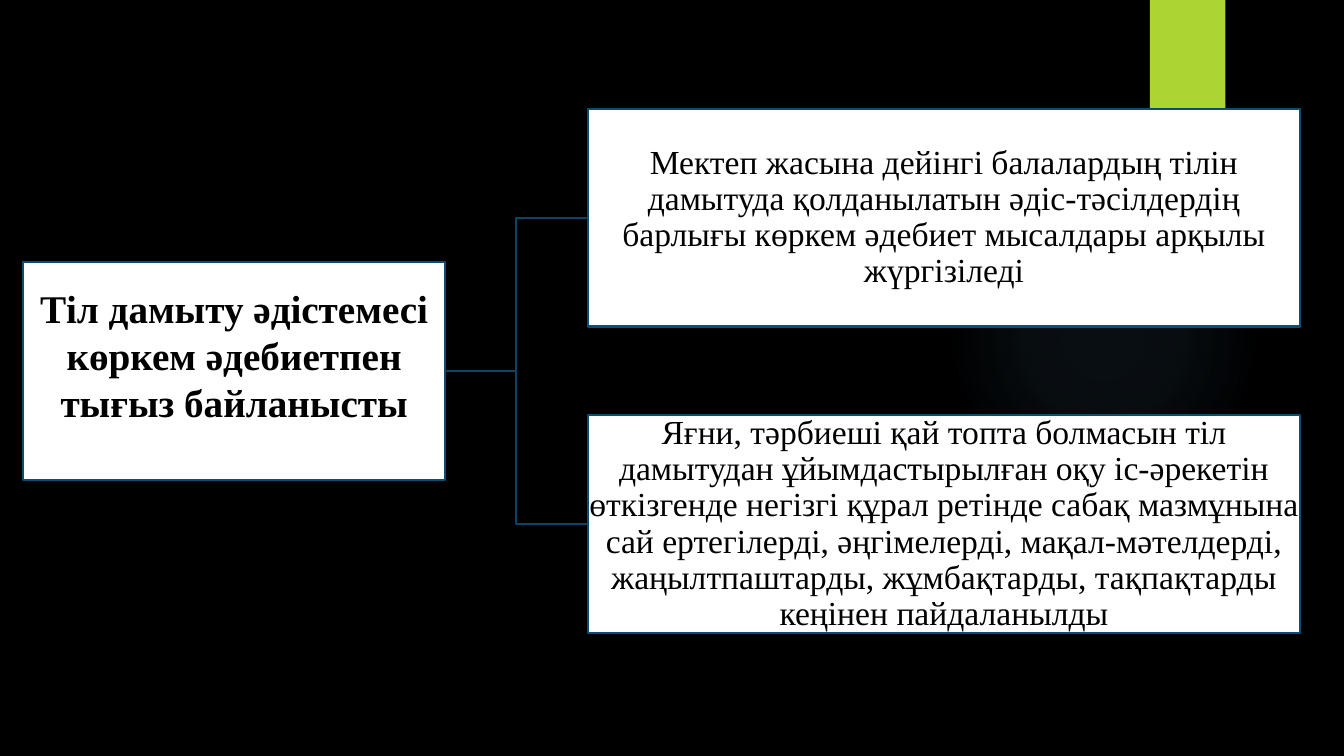
from lxml import etree
from pptx import Presentation
from pptx.dml.color import RGBColor
from pptx.enum.shapes import MSO_CONNECTOR as Connector, MSO_SHAPE as Shape
from pptx.enum.text import MSO_ANCHOR as Anchor, PP_ALIGN as Align
from pptx.oxml import parse_xml
from pptx.oxml.ns import nsdecls, qn
from pptx.util import Cm, Pt

BOX_HEIGHT = 5.49
ROOT_LEFT, ROOT_TOP, ROOT_WIDTH = 0.58, 6.6, 10.64
BRANCH_LEFT, BRANCH_WIDTH = 14.81, 17.96
BRANCH_TOP, BRANCH_STEP = 2.74, 7.72
GLOW_STOPS = [(0, 7), (36, 6), (69, 0)]

ROOT_TEXT = "Тіл дамыту әдістемесі көркем әдебиетпен тығыз байланысты"
BRANCH_TEXTS = [
    "Мектеп жасына дейінгі балалардың тілін дамытуда қолданылатын "
    "әдіс-тәсілдердің барлығы көркем әдебиет мысалдары арқылы жүргізіледі",
    "Яғни, тәрбиеші қай топта болмасын тіл дамытудан ұйымдастырылған оқу "
    "іс-әрекетін өткізгенде негізгі құрал ретінде сабақ мазмұнына сай "
    "ертегілерді, әңгімелерді, мақал-мәтелдерді, жаңылтпаштарды, "
    "жұмбақтарды, тақпақтарды кеңінен пайдаланылды",
]


def paint(target, colour):
    target.solid()
    target.fore_color.rgb = RGBColor.from_string(colour)


def add_plain(page, kind, left, top, width, height, colour):
    shape = page.shapes.add_shape(kind, Cm(left), Cm(top), Cm(width), Cm(height))
    shape.shadow.inherit = False
    shape.line.fill.background()
    paint(shape.fill, colour)
    return shape


def add_glow(page, left, top, size, colour):
    glow = add_plain(page, Shape.OVAL, left, top, size, size, colour)
    stops = "".join(
        f'<a:gs pos="{place * 1000}"><a:srgbClr val="{colour}">'
        f'<a:alpha val="{alpha * 1000}"/></a:srgbClr></a:gs>'
        for place, alpha in GLOW_STOPS
    )
    gradient = parse_xml(
        f'<a:gradFill {nsdecls("a")}><a:gsLst>{stops}</a:gsLst><a:path path="circle">'
        '<a:fillToRect l="50000" t="50000" r="50000" b="50000"/></a:path></a:gradFill>'
    )
    properties = glow.element.spPr
    properties.replace(properties.find(qn("a:solidFill")), gradient)


def add_link(page, start, end):
    link = page.shapes.add_connector(Connector.ELBOW, *map(Cm, start + end))
    paint(link.line.fill, "0B4467")
    link.line.width = Pt(1.5)
    etree.SubElement(link.element.spPr, qn("a:effectLst"))


def add_card(page, left, top, width, text, size, bold=False, spacing=1.0, bottom=0.04):
    card = add_plain(page, Shape.RECTANGLE, left, top, width, BOX_HEIGHT, "FFFFFF")
    paint(card.line.fill, "0D4D74")
    card.line.width = Pt(1.5)
    frame = card.text_frame
    frame.word_wrap = True
    frame.vertical_anchor = Anchor.MIDDLE
    frame.margin_left = frame.margin_right = frame.margin_top = Cm(0.04)
    frame.margin_bottom = Cm(bottom)
    para = frame.paragraphs[0]
    para.text = text
    para.alignment = Align.CENTER
    para.line_spacing = spacing
    para.font.name = "Times New Roman"
    para.font.size = Pt(size)
    para.font.bold = bold
    para.font.color.rgb = RGBColor.from_string("000000")


def main():
    deck = Presentation()
    deck.slide_width, deck.slide_height = Cm(33.87), Cm(19.05)
    page = deck.slides.add_slide(deck.slide_layouts[6])
    paint(page.background.fill, "000000")

    add_glow(page, 23.9, 4.65, 7.82, "7AC4F0")
    add_plain(page, Shape.RECTANGLE, 28.98, 0, 1.9, 3.18, "ACD433")

    root_exit = (ROOT_LEFT + ROOT_WIDTH, ROOT_TOP + BOX_HEIGHT / 2)
    add_card(page, ROOT_LEFT, ROOT_TOP, ROOT_WIDTH, ROOT_TEXT, 28, bold=True, bottom=0.85)
    for index, text in enumerate(BRANCH_TEXTS):
        top = BRANCH_TOP + index * BRANCH_STEP
        add_link(page, root_exit, (BRANCH_LEFT, top + BOX_HEIGHT / 2))
        add_card(page, BRANCH_LEFT, top, BRANCH_WIDTH, text, 24, spacing=0.9)

    deck.save("out.pptx")


if __name__ == "__main__":
    main()
